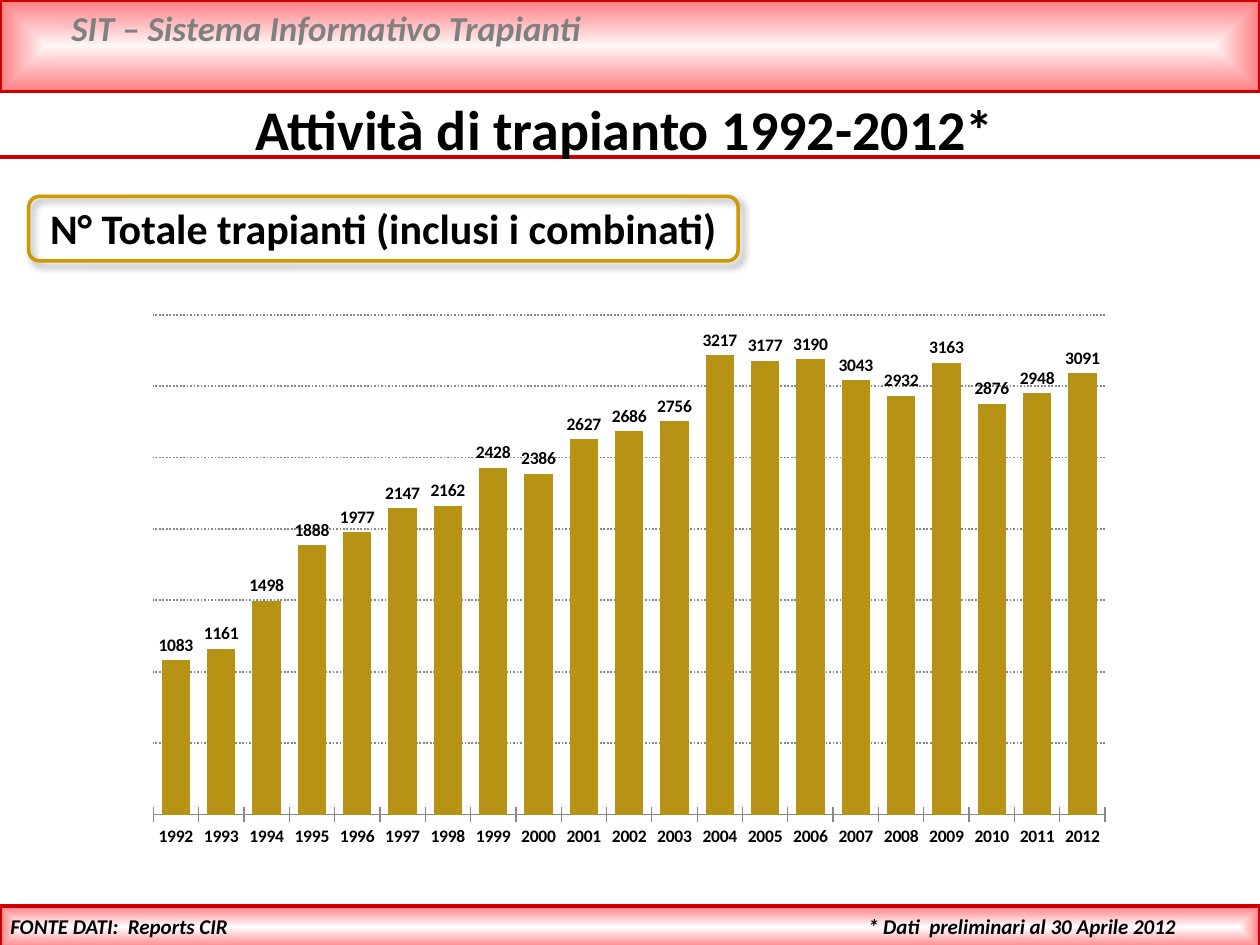
from dataclasses import dataclass

from lxml.etree import SubElement
from pptx import Presentation
from pptx.chart.data import CategoryChartData
from pptx.dml.color import RGBColor
from pptx.enum.chart import XL_CHART_TYPE, XL_LABEL_POSITION, XL_TICK_LABEL_POSITION, XL_TICK_MARK
from pptx.enum.dml import MSO_LINE
from pptx.enum.shapes import MSO_CONNECTOR, MSO_SHAPE
from pptx.enum.text import PP_ALIGN
from pptx.oxml.ns import qn
from pptx.util import Cm, Pt

FONT = "Calibri"
RED = "CC0000"
GOLD = "CC9900"
PINK = "FF7C80"
SLIDE_WIDTH = 25.4
TRANSPLANTS = (
    1083, 1161, 1498, 1888, 1977, 2147, 2162, 2428, 2386, 2627, 2686,
    2756, 3217, 3177, 3190, 3043, 2932, 3163, 2876, 2948, 3091,
)


@dataclass(frozen=True)
class Box:
    """Position and size in centimetres."""

    left: float
    top: float
    width: float
    height: float

    def lengths(self) -> tuple:
        """Return the four lengths as python-pptx expects them."""
        return Cm(self.left), Cm(self.top), Cm(self.width), Cm(self.height)


@dataclass(frozen=True)
class Band:
    """A full-width gradient band."""

    box: Box
    centre_color: str


BANDS = (
    Band(Box(0, 0, SLIDE_WIDTH, 1.85), "FFF6F6"),
    Band(Box(0, 18.26, SLIDE_WIDTH, 0.86), "FFFFFF"),
)


def rgb(value: str) -> RGBColor:
    """Turn a hex string into a colour."""
    return RGBColor.from_string(value)


def set_line(line, color: str, width: float) -> None:
    """Give a line its colour and width in points."""
    line.color.rgb = rgb(color)
    line.width = Pt(width)


def add_band(slide, band: Band) -> None:
    """Draw a band shaded from its centre to its edges."""
    shape = slide.shapes.add_shape(MSO_SHAPE.RECTANGLE, *band.box.lengths())
    shape.shadow.inherit = False
    set_line(shape.line, RED, 2)
    shape.fill.gradient()
    for stop, color in zip(shape.fill.gradient_stops, (band.centre_color, PINK)):
        stop.color.rgb = rgb(color)
    gradient = shape.element.spPr.find(qn("a:gradFill"))
    gradient.remove(gradient.find(qn("a:lin")))
    shading = SubElement(gradient, qn("a:path"), {"path": "shape"})
    edges = {edge: "50000" for edge in "ltrb"}
    SubElement(shading, qn("a:fillToRect"), edges)


def add_text(slide, text: str, box: Box, *, size: float, color: str = "000000",
             italic: bool = False, align: PP_ALIGN = PP_ALIGN.LEFT, wrap: bool = True) -> None:
    """Place one bold paragraph on the slide."""
    frame = slide.shapes.add_textbox(*box.lengths()).text_frame
    frame.word_wrap = wrap
    paragraph = frame.paragraphs[0]
    paragraph.alignment = align
    run = paragraph.add_run()
    run.text = text
    font = run.font
    font.name, font.size, font.bold, font.italic = FONT, Pt(size), True, italic
    font.color.rgb = rgb(color)


def add_rule(slide, top: float) -> None:
    """Draw a red rule across the slide."""
    rule = slide.shapes.add_connector(
        MSO_CONNECTOR.STRAIGHT, Cm(0), Cm(top), Cm(SLIDE_WIDTH), Cm(top))
    set_line(rule.line, RED, 2)
    SubElement(rule.element.spPr, qn("a:effectLst"))


def add_frame(slide, box: Box) -> None:
    """Draw the rounded gold outline with its soft shadow."""
    shape = slide.shapes.add_shape(MSO_SHAPE.ROUNDED_RECTANGLE, *box.lengths())
    shape.fill.background()
    set_line(shape.line, GOLD, 2)
    shape.shadow.inherit = False
    effects = shape.element.spPr.find(qn("a:effectLst"))
    shadow = SubElement(effects, qn("a:outerShdw"), {
        "blurRad": str(Pt(4)), "dist": str(Pt(3)), "dir": "2700000",
        "algn": "tl", "rotWithShape": "0"})
    color = SubElement(shadow, qn("a:srgbClr"), {"val": "000000"})
    SubElement(color, qn("a:alpha"), {"val": "40000"})


def set_plot_layout(chart, **fractions: float) -> None:
    """Fix the inner plot area as fractions of the chart."""
    plot_area = chart.element.chart.plotArea
    layout = plot_area.find(qn("c:layout"))
    if layout is None:
        layout = SubElement(plot_area, qn("c:layout"))
        plot_area.insert(0, layout)
    manual = SubElement(layout, qn("c:manualLayout"))
    settings = {"layoutTarget": "inner", "xMode": "edge", "yMode": "edge", **fractions}
    for name, value in settings.items():
        SubElement(manual, qn(f"c:{name}"), {"val": str(value)})


def add_transplant_chart(slide, box: Box) -> None:
    """Draw the yearly transplant totals as columns."""
    data = CategoryChartData()
    data.categories = [str(year) for year in range(1992, 2013)]
    data.add_series("Series 1", TRANSPLANTS)
    chart = slide.shapes.add_chart(
        XL_CHART_TYPE.COLUMN_CLUSTERED, *box.lengths(), data).chart
    chart.has_legend = False
    chart.has_title = False
    chart.font.name, chart.font.size = FONT, Pt(10)
    chart.font.color.rgb = rgb("000000")
    set_plot_layout(chart, x=0.02, y=0.02, w=0.96, h=0.9)

    plot = chart.plots[0]
    plot.gap_width, plot.overlap, plot.vary_by_categories = 60, -20, False
    fill = plot.series[0].format.fill
    fill.solid()
    fill.fore_color.rgb = rgb("B79315")
    plot.has_data_labels = True
    labels = plot.data_labels
    labels.show_value = True
    labels.position = XL_LABEL_POSITION.OUTSIDE_END
    labels.font.name, labels.font.size, labels.font.bold = FONT, Pt(10), True
    labels.font.color.rgb = rgb("000000")

    years = chart.category_axis
    years.major_tick_mark = XL_TICK_MARK.CROSS
    years.tick_labels.font.bold = True
    set_line(years.format.line, "888888", 0.75)

    totals = chart.value_axis
    totals.minimum_scale, totals.maximum_scale, totals.major_unit = 0, 3500, 500
    totals.tick_label_position = XL_TICK_LABEL_POSITION.NONE
    totals.visible = False
    totals.has_major_gridlines = True
    grid = totals.major_gridlines.format.line
    set_line(grid, "888888", 1)
    grid.dash_style = MSO_LINE.ROUND_DOT


def main() -> None:
    """Build and save the slide."""
    presentation = Presentation()
    presentation.slide_width, presentation.slide_height = Cm(SLIDE_WIDTH), Cm(19.05)
    slide = presentation.slides.add_slide(presentation.slide_layouts[6])
    for band in BANDS:
        add_band(slide, band)
    add_text(slide, "SIT – Sistema Informativo Trapianti", Box(1.19, 0, 22.81, 1.12),
             size=20, color="808080", italic=True)
    add_rule(slide, 3.17)
    add_text(slide, "Attività di trapianto 1992-2012*", Box(0, 1.78, 25.2, 1.63),
             size=32, align=PP_ALIGN.CENTER)
    add_text(slide, "N° Totale trapianti (inclusi i combinati)", Box(0.76, 3.96, 14.12, 1.3),
             size=24)
    add_frame(slide, Box(0.58, 3.96, 14.3, 1.3))
    add_text(slide, "FONTE DATI:  Reports CIR", Box(-0.1, 18.29, 4.95, 0.76),
             size=12, italic=True, align=PP_ALIGN.RIGHT, wrap=False)
    add_transplant_chart(slide, Box(2.69, 6.12, 19.99, 11.2))
    add_text(slide, "* Dati  preliminari al 30 Aprile 2012", Box(17.25, 18.29, 8.15, 0.76),
             size=12, italic=True)
    presentation.save("out.pptx")


if __name__ == "__main__":
    main()
